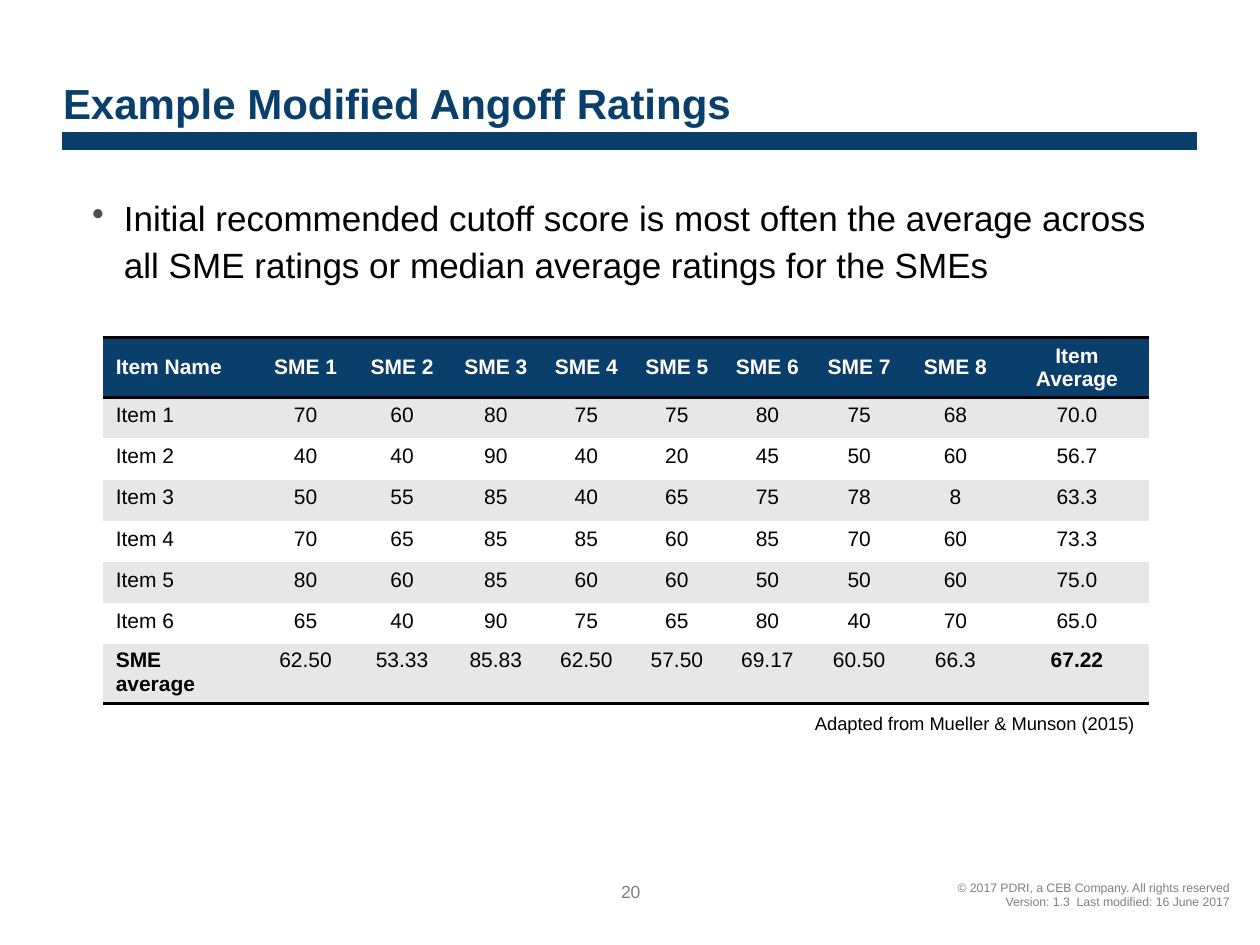
from lxml import etree
from pptx import Presentation
from pptx.dml.color import RGBColor
from pptx.enum.shapes import MSO_CONNECTOR
from pptx.enum.text import MSO_ANCHOR as Anchor, MSO_AUTO_SIZE as AutoSize, PP_ALIGN as Align
from pptx.oxml.ns import qn
from pptx.util import Cm, Pt

NAVY = RGBColor(0x0A, 0x3F, 0x6B)
WHITE = RGBColor(0xFF, 0xFF, 0xFF)
BLACK = RGBColor(0x00, 0x00, 0x00)
BAND = RGBColor(0xE7, 0xE7, 0xE7)
GREY = RGBColor(0x7F, 0x7F, 0x7F)
PLAIN_TABLE = "{2D5ABB26-0587-4C30-8999-92F81FD0307C}"


def write(frame, text, size=12, color=BLACK, bold=False, align=Align.LEFT,
          anchor=Anchor.TOP, spacing=None, margins=None, bullet=None):
    frame.word_wrap = True
    frame.vertical_anchor = anchor
    if margins:
        (frame.margin_left, frame.margin_top,
         frame.margin_right, frame.margin_bottom) = [Cm(m) for m in margins]
    frame.text = text
    for paragraph in frame.paragraphs:
        if bullet:
            props = paragraph._p.get_or_add_pPr()
            props.set("marL", str(Cm(0.95)))
            props.set("indent", str(Cm(-0.64)))
            tint = etree.SubElement(props, qn("a:buClr"))
            etree.SubElement(tint, qn("a:srgbClr"), val="4D4F53")
            etree.SubElement(props, qn("a:buChar"), char=bullet)
        paragraph.alignment = align
        if spacing:
            paragraph.line_spacing = spacing
        for run in paragraph.runs:
            font = run.font
            font.name, font.size, font.bold = "Arial", Pt(size), bold
            font.color.rgb = color


def rule(cell, edge):
    border = etree.Element(qn(f"a:{edge}"), w=str(Pt(2)))
    fill = etree.SubElement(border, qn("a:solidFill"))
    etree.SubElement(fill, qn("a:srgbClr"), val=str(BLACK))
    cell._tc.get_or_add_tcPr().insert(0, border)


prs = Presentation()
prs.slide_width, prs.slide_height = Cm(25.4), Cm(19.05)
slide = prs.slides.add_slide(prs.slide_layouts[5])
shapes = slide.shapes

title = shapes.title
title.left, title.top, title.width, title.height = Cm(1.27), Cm(1.02), Cm(22.86), Cm(1.68)
write(title.text_frame, "Example Modified Angoff Ratings", size=24, color=NAVY,
      bold=True, anchor=Anchor.BOTTOM, margins=(0, 0.13, 0, 0.13))
title.text_frame.auto_size = AutoSize.NONE

title_bar = shapes.add_connector(MSO_CONNECTOR.STRAIGHT, Cm(1.25), Cm(2.84), Cm(24.13), Cm(2.84))
title_bar.line.color.rgb = NAVY
title_bar.line.width = Pt(10.25)
etree.SubElement(title_bar._element.spPr, qn("a:effectLst"))

summary = shapes.add_textbox(Cm(1.3), Cm(3.76), Cm(22.86), Cm(12.8))
write(summary.text_frame,
      "Initial recommended cutoff score is most often the average across all SME "
      "ratings or median average ratings for the SMEs",
      size=20, spacing=1.1, bullet="•")

ratings = [
    ["Item Name"] + [f"SME {n}" for n in range(1, 9)] + ["Item Average"],
    "Item 1|70|60|80|75|75|80|75|68|70.0".split("|"),
    "Item 2|40|40|90|40|20|45|50|60|56.7".split("|"),
    "Item 3|50|55|85|40|65|75|78|8|63.3".split("|"),
    "Item 4|70|65|85|85|60|85|70|60|73.3".split("|"),
    "Item 5|80|60|85|60|60|50|50|60|75.0".split("|"),
    "Item 6|65|40|90|75|65|80|40|70|65.0".split("|"),
    "SME average|62.50|53.33|85.83|62.50|57.50|69.17|60.50|66.3|67.22".split("|"),
]
column_widths = [3.1, 1.96, 1.93, 1.85, 1.8, 1.85, 1.8, 1.9, 1.98, 2.92]
last_row, last_column = len(ratings) - 1, len(column_widths) - 1

ratings_frame = shapes.add_table(len(ratings), len(column_widths),
                                 Cm(2.08), Cm(6.81), Cm(21.09), Cm(7.11))
table = ratings_frame.table
table._tbl.tblPr.find(qn("a:tableStyleId")).text = PLAIN_TABLE
for column, width in zip(table.columns, column_widths):
    column.width = Cm(width)

for r, values in enumerate(ratings):
    header = r == 0
    table.rows[r].height = Cm(1.04 if header else 0.83)
    for c, value in enumerate(values):
        cell = table.cell(r, c)
        write(cell.text_frame, value,
              color=WHITE if header else BLACK,
              bold=header or (r == last_row and c in (0, last_column)),
              align=Align.CENTER if c else Align.LEFT)
        cell.vertical_anchor = Anchor.MIDDLE if header else Anchor.TOP
        cell.fill.solid()
        cell.fill.fore_color.rgb = NAVY if header else BAND if r % 2 else WHITE
        if r in (0, last_row):
            cell.margin_top = cell.margin_bottom = Cm(0.09)
            rule(cell, "lnB")
        if header:
            rule(cell, "lnT")

source = shapes.add_textbox(Cm(16.43), Cm(14.35), Cm(6.73), Cm(0.46))
write(source.text_frame, "Adapted from Mueller & Munson (2015)", size=10.5,
      margins=(0, 0, 0, 0))

page_number = shapes.add_textbox(Cm(12.22), Cm(17.86), Cm(0.99), Cm(0.38))
write(page_number.text_frame, "20", size=10, color=GREY, align=Align.CENTER,
      spacing=Pt(9), margins=(0, 0, 0, 0))

copyright_line = shapes.add_textbox(Cm(10.82), Cm(17.75), Cm(13.97), Cm(0.58))
write(copyright_line.text_frame,
      "© 2017 PDRI, a CEB Company. All rights reserved\n"
      "Version: 1.3  Last modified: 16 June 2017",
      size=7, color=GREY, align=Align.RIGHT, anchor=Anchor.BOTTOM,
      spacing=Pt(8), margins=(0, 0, 0, 0))

prs.save("out.pptx")
